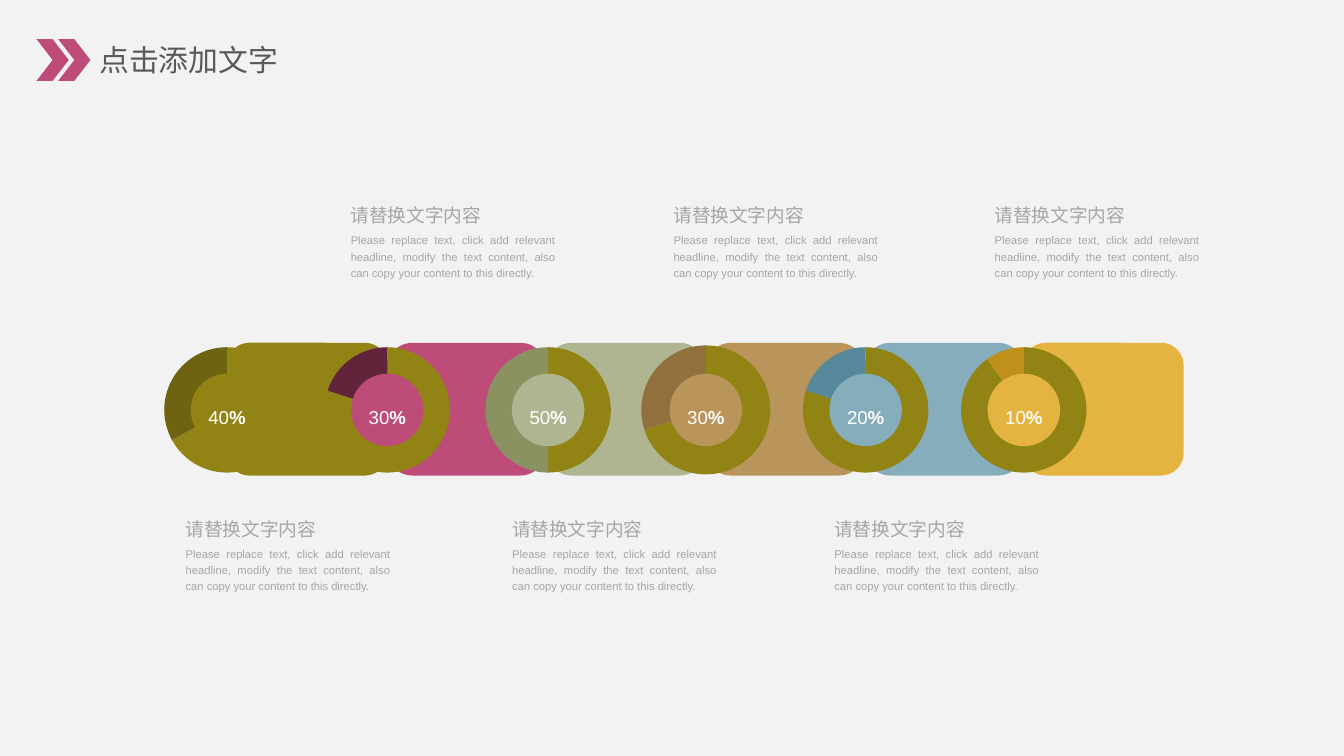
from lxml import etree
from pptx import Presentation
from pptx.chart.data import CategoryChartData
from pptx.dml.color import RGBColor
from pptx.enum.chart import XL_CHART_TYPE as ChartType
from pptx.enum.shapes import MSO_SHAPE as Shape
from pptx.enum.text import MSO_ANCHOR as Anchor, MSO_AUTO_SIZE as AutoSize, PP_ALIGN as Align
from pptx.oxml import parse_xml
from pptx.oxml.ns import nsdecls, qn
from pptx.util import Cm, Pt

CJK_FONT = "Noto Sans CJK SC"
OLIVE, PINK, WHITE, GREY = "918415", "BD4D78", "FFFFFF", "A6A6A6"
HEADING = "请替换文字内容"
BODY = ("Please replace text, click add relevant headline, modify the text content, "
        "also can copy your content to this directly.")

# bar colour, slice colour, label, slice value, pie size, pie centre, caption left (cm)
STEPS = [
    (OLIVE, "6D6310", "40", 33, 2.79, 4.29, 3.51),
    (PINK, "61243B", "30", 20, 2.79, 7.32, 6.63),
    ("AFB591", "8A9262", "50", 50, 2.79, 10.36, 9.68),
    ("B9945B", "91703E", "30", 30, 2.87, 13.34, 12.73),
    ("85ADBC", "55889B", "20", 20, 2.79, 16.36, 15.77),
    ("E5B440", "C1901A", "10", 10, 2.79, 19.35, 18.8),
]
BAR_LEFT, BAR_PITCH, BAR_WIDTH, BAR_TOP, BAR_HEIGHT = 4.29, 3.01, 3.03, 6.48, 2.51
PIE_MIDDLE, HUB_SIZE = 7.75, 1.37
CAPTION_TOPS = (9.73, 3.81)  # below the bars, above the bars


def colour(fill, code):
    fill.solid()
    fill.fore_color.rgb = RGBColor.from_string(code)


def set_all(target, values):
    for name, value in values.items():
        setattr(target, name, value)


def cm_box(*lengths):
    return [Cm(length) for length in lengths]


def write(frame, spans, size, code, inset=(0, 0), font="Arial", anchor=Anchor.TOP, **para_format):
    """Fill a text frame with one paragraph of (text, bold) spans."""
    side, edge = cm_box(*inset)
    set_all(frame, dict(word_wrap=True, auto_size=AutoSize.NONE, vertical_anchor=anchor,
                        margin_left=side, margin_right=side,
                        margin_top=edge, margin_bottom=edge))
    para = frame.paragraphs[0]
    set_all(para, para_format)
    for text, bold in spans:
        span = para.add_run()
        span.text = text
        set_all(span.font, dict(size=Pt(size), bold=bold, name=font))
        colour(span.font.fill, code)
        etree.SubElement(span.font._element, qn("a:ea")).set("typeface", CJK_FONT)


def add_shape(page, kind, box, code):
    shape = page.shapes.add_shape(kind, *cm_box(*box))
    shape.shadow.inherit = False
    shape.line.fill.background()
    colour(shape.fill, code)
    return shape


def add_header(page, left, top):
    title = page.shapes.title
    set_all(title, dict(zip(("left", "top", "width", "height"),
                            cm_box(left + 1.01, top - 0.05, 4.98, 0.86))))
    write(title.text_frame, [("点击添加文字", False)], 16, "595959", (0.18, 0.1), CJK_FONT,
          alignment=Align.LEFT)
    for shift in (0, 0.41):
        add_shape(page, Shape.CHEVRON, (left + shift, top, 0.61, 0.79), PINK)


def add_pie(page, box, value, code):
    data = CategoryChartData()
    data.categories = ["1", "2"]
    data.add_series("Series 1", (100 - value, value))
    chart = page.shapes.add_chart(ChartType.PIE, *cm_box(*box), data).chart
    set_all(chart, dict(has_legend=False, has_title=False))
    set_all(chart.font, dict(size=Pt(30), name="Arial"))
    plot = chart.plots[0]
    plot.vary_by_categories = False
    for index, point_code in enumerate((OLIVE, code)):
        point = plot.series[0].points[index]
        colour(point.format.fill, point_code)
        point.format.line.fill.background()

    # Fix the plot so that the pie fills the frame's height
    area = chart._chartSpace.find(".//" + qn("c:plotArea"))
    for old in area.findall(qn("c:layout")):
        area.remove(old)
    sizes = "".join(f'<c:{name} val="{number}"/>' for name, number in
                    (("x", 0.075), ("y", 0), ("w", 0.85), ("h", 1)))
    area.insert(0, parse_xml(
        f'<c:layout {nsdecls("c")}><c:manualLayout><c:layoutTarget val="inner"/>'
        f'<c:xMode val="edge"/><c:yMode val="edge"/>{sizes}</c:manualLayout></c:layout>'))


def add_ring(page, centre, size, value, slice_code, hub_code):
    add_pie(page, (centre - size / 2, PIE_MIDDLE - size / 2, size, size), value, slice_code)
    add_shape(page, Shape.OVAL, (centre - HUB_SIZE / 2, PIE_MIDDLE - HUB_SIZE / 2,
                                 HUB_SIZE, HUB_SIZE), hub_code)


def add_label(page, centre, number):
    box = page.shapes.add_textbox(*cm_box(centre - 0.56, 7.42, 1.12, 0.69))
    write(box.text_frame, [(number, False), ("%", True)], 10, WHITE, anchor=Anchor.MIDDLE,
          alignment=Align.CENTER, line_spacing=1.6)


def add_caption(page, left, top):
    body = page.shapes.add_textbox(*cm_box(left, top + 0.56, 3.86, 0.91))
    write(body.text_frame, [(BODY, False)], 6, GREY, alignment=Align.JUSTIFY,
          line_spacing=1.2, space_before=Pt(6.4))
    heading = page.shapes.add_textbox(*cm_box(left - 0.05, top, 2.64, 0.51))
    write(heading.text_frame, [(HEADING, False)], 10, GREY, (0.05, 0.05))


def main():
    deck = Presentation()
    deck.slide_width, deck.slide_height = cm_box(25.4, 14.29)
    page = deck.slides.add_slide(deck.slide_layouts[5])
    colour(page.background.fill, "F2F2F2")
    add_header(page, 0.69, 0.74)

    # Bars, the rightmost one at the back
    for index, step in reversed(list(enumerate(STEPS))):
        bar = add_shape(page, Shape.ROUNDED_RECTANGLE,
                        (BAR_LEFT + index * BAR_PITCH, BAR_TOP, BAR_WIDTH, BAR_HEIGHT), step[0])
        bar.adjustments[0] = 0.17 if index in (0, len(STEPS) - 1) else 0.2

    # Rings, percentages and captions that alternate below and above
    for index, (code, slice_code, number, value, size, centre, left) in enumerate(STEPS):
        add_ring(page, centre, size, value, slice_code, code)
        add_label(page, centre, number)
        add_caption(page, left, CAPTION_TOPS[index % 2])

    deck.save("out.pptx")


if __name__ == "__main__":
    main()
